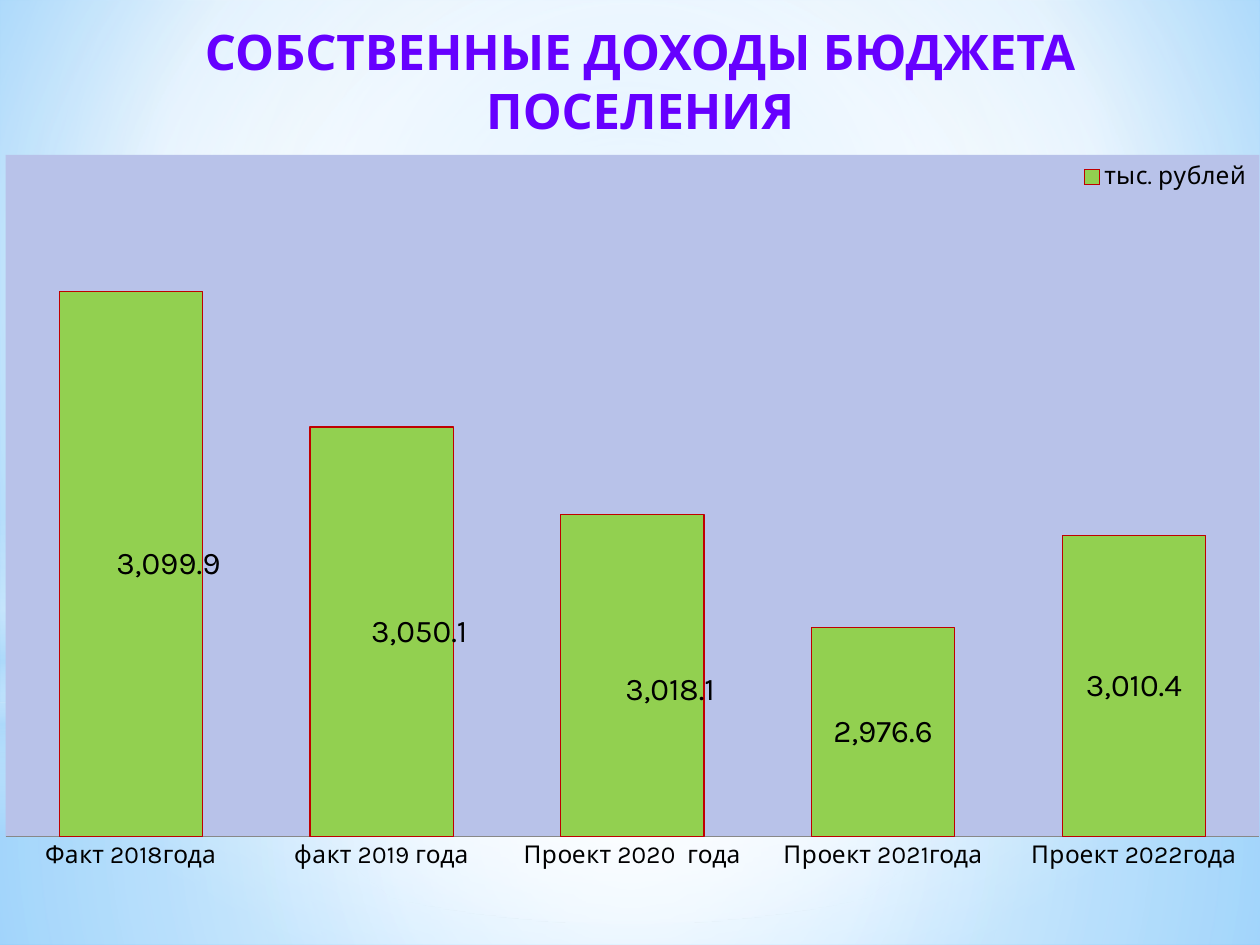
import pptx
import pptx.chart.data
import pptx.dml.color
import pptx.enum.chart
import pptx.enum.shapes
import pptx.enum.text
import pptx.oxml
import pptx.util
from pptx.util import Cm

RGB = pptx.dml.color.RGBColor.from_string
NS = {
    "a": "http://schemas.openxmlformats.org/drawingml/2006/main",
    "c": "http://schemas.openxmlformats.org/drawingml/2006/chart",
}
FONT = "Karla"
HUES = {
    "white": "FFFFFF", "pale": "B4DCFA", "sky": "9ED5FF", "blue": "5BB9FF",
    "title": "6600FF", "plot": "B8C2E9", "bar": "92D050", "edge": "C00000",
    "axis": "888888", "text": "000000",
}
MID = (50, 50, 50, 50)


def shade(fill, stops, rect=None):
    """Fill with stops of (position, hue, opacity), round or top to bottom."""
    fill.gradient()
    grad = fill._fill._gradFill
    for kid in list(grad):
        grad.remove(kid)
    marks = "".join(
        f'<a:gs pos="{pos * 1000}"><a:srgbClr val="{HUES[hue]}">'
        f'<a:alpha val="{alpha * 1000}"/></a:srgbClr></a:gs>'
        for pos, hue, alpha in stops)
    way = '<a:lin ang="5400000" scaled="0"/>'
    if rect:
        sides = " ".join(f'{side}="{n * 1000}"' for side, n in zip("ltrb", rect))
        way = f'<a:path path="circle"><a:fillToRect {sides}/></a:path>'
    new = pptx.oxml.parse_xml(
        f'<a:gradFill xmlns:a="{NS["a"]}"><a:gsLst>{marks}</a:gsLst>{way}</a:gradFill>')
    for kid in list(new):
        grad.append(kid)


def place(left, top, wide=None, high=None):
    """Manual chart layout, in fractions of the chart."""
    parts = '<c:xMode val="edge"/><c:yMode val="edge"/>' if wide else ""
    for tag, val in zip("xywh", (left, top, wide, high)):
        if val is not None:
            parts += f'<c:{tag} val="{val}"/>'
    return pptx.oxml.parse_xml(
        f'<c:layout xmlns:c="{NS["c"]}"><c:manualLayout>{parts}</c:manualLayout></c:layout>')


deck = pptx.Presentation()
deck.slide_width, deck.slide_height = Cm(25.4), Cm(19.05)
slide = deck.slides.add_slide(deck.slide_layouts[5])

# Background
shade(slide.background.fill,
      [(0, "sky", 100), (60, "white", 100), (100, "blue", 100)], (20, 10, 20, 60))

# Soft light bands and glow
box = pptx.enum.shapes.MSO_SHAPE.RECTANGLE
oval = pptx.enum.shapes.MSO_SHAPE.OVAL
bands = [
    (box, 14.17, 4.88, [(0, "white", 91), (37, "white", 76), (100, "pale", 79)], MID),
    (box, 0, 14.17, [(0, "white", 89), (48, "white", 62), (100, "pale", 79)], MID),
    (box, 10.46, 6.35, [(0, "white", 0), (29, "white", 30), (45, "pale", 40),
                        (55, "white", 26), (65, "pale", 60), (100, "white", 0)], None),
    (oval, 4.45, 14.17, [(0, "white", 100), (56, "white", 0)], MID),
]
for kind, top, high, stops, rect in bands:
    band = slide.shapes.add_shape(kind, 0, Cm(top), deck.slide_width, Cm(high))
    band.shadow.inherit = False
    band.line.fill.background()
    shade(band.fill, stops, rect)

# Title, brought in front of the bands
title = slide.shapes.title
slide.shapes._spTree.append(title._element)
title.left, title.top, title.width, title.height = Cm(0.84), Cm(0.33), Cm(24.13), Cm(2.59)
title.text_frame.text = "СОБСТВЕННЫЕ ДОХОДЫ БЮДЖЕТА ПОСЕЛЕНИЯ"
title.text_frame.vertical_anchor = pptx.enum.text.MSO_ANCHOR.MIDDLE
para = title.text_frame.paragraphs[0]
para.alignment = pptx.enum.text.PP_ALIGN.CENTER
para.font.name, para.font.size, para.font.bold = FONT, pptx.util.Pt(28), True
para.font.color.rgb = RGB(HUES["title"])

# Chart
data = pptx.chart.data.CategoryChartData(number_format="#,##0.0")
data.categories = ["Факт 2018года", "факт 2019 года", "Проект 2020  года",
                   "Проект 2021года", "Проект 2022года"]
data.add_series("тыс. рублей", [3099.9, 3050.1, 3018.1, 2976.6, 3010.4])
chart = slide.shapes.add_chart(
    pptx.enum.chart.XL_CHART_TYPE.COLUMN_STACKED,
    Cm(0.1), Cm(3.12), Cm(25.3), Cm(14.81), data).chart
chart.has_title = False
chart.font.name, chart.font.size = FONT, pptx.util.Pt(18)
chart.font.color.rgb = RGB(HUES["text"])

# Plot area
area = chart._chartSpace.chart.plotArea
for old in area.findall("c:layout", NS):
    area.remove(old)
frame = place(0, 0, 1, 0.928)
frame[0].insert(0, pptx.oxml.parse_xml(
    f'<c:layoutTarget xmlns:c="{NS["c"]}" val="inner"/>'))
area.insert(0, frame)
area.append(pptx.oxml.parse_xml(
    f'<c:spPr xmlns:c="{NS["c"]}" xmlns:a="{NS["a"]}"><a:solidFill>'
    f'<a:srgbClr val="{HUES["plot"]}"/></a:solidFill></c:spPr>'))

# Axes
cat, val = chart.category_axis, chart.value_axis
cat.major_tick_mark = pptx.enum.chart.XL_TICK_MARK.NONE
cat.tick_labels.font.size = pptx.util.Pt(14)
cat.format.line.color.rgb = RGB(HUES["axis"])
val.minimum_scale, val.maximum_scale = 2900, 3150
val.has_major_gridlines = False
val.visible = False

# Legend
chart.has_legend = True
key = chart.legend
key.position = pptx.enum.chart.XL_LEGEND_POSITION.RIGHT
key.include_in_layout = False
key.font.size = pptx.util.Pt(14)
key._element.find("c:legendPos", NS).addnext(place(0.855, 0.005, 0.14, 0.05))

# Bars and their labels
plot = chart.plots[0]
plot.gap_width, plot.overlap, plot.vary_by_categories = 75, 100, False
bars = plot.series[0]
bars.format.fill.solid()
bars.format.fill.fore_color.rgb = RGB(HUES["bar"])
bars.format.line.color.rgb = RGB(HUES["edge"])
bars.format.line.width = pptx.util.Pt(0.75)
tags = bars.data_labels
tags.show_value = True
tags.number_format, tags.number_format_is_linked = "#,##0.0", False
tags.font.size = pptx.util.Pt(18)
for spot, shift in enumerate([(0.03, 0), (0.03, 0), (0.03, 0.02)]):
    tag = bars.points[spot].data_label
    tag.position = pptx.enum.chart.XL_LABEL_POSITION.CENTER
    tag.font.size = pptx.util.Pt(18)
    tag._dLbl.find("c:idx", NS).addnext(place(*shift))

deck.save("out.pptx")
